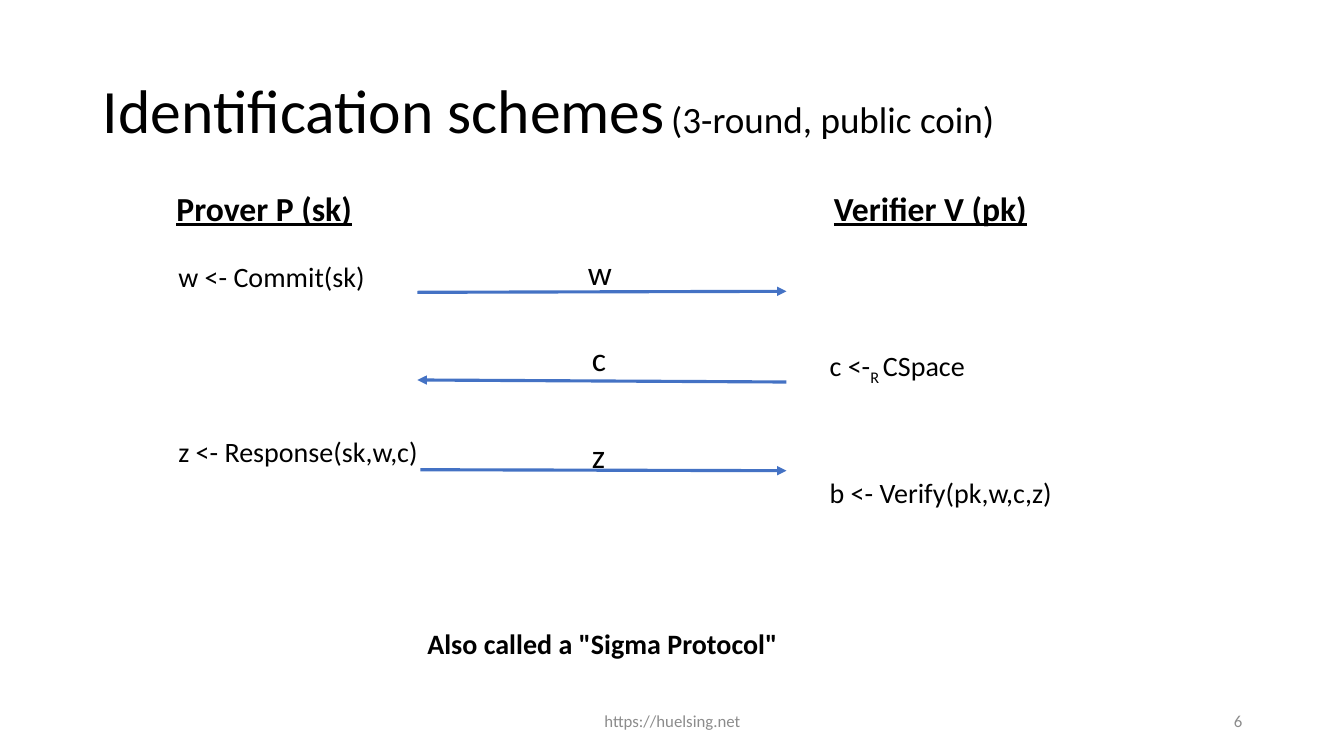
import pptx
import pptx.dml.color
import pptx.enum.shapes
import pptx.enum.text
import pptx.oxml
import pptx.oxml.ns
import pptx.util

Inches = pptx.util.Inches
Pt = pptx.util.Pt
ALIGN = pptx.enum.text.PP_ALIGN
ANCHOR = pptx.enum.text.MSO_ANCHOR
COLORS = {"text": "000000", "arrow": "4472C4", "footer": "8C8C8C"}


def style(run, size, color="text", bold=False, underline=False):
    run.font.name = "Calibri"
    run.font.size = Pt(size)
    run.font.bold = bold
    run.font.underline = underline
    run.font.color.rgb = pptx.dml.color.RGBColor.from_string(COLORS[color])


def add_text(box, parts, size, inset=(0.1, 0.05), align=ALIGN.LEFT,
             anchor=ANCHOR.TOP, **look):
    """Place a text box made of one run per part and return its runs."""
    frame = slide.shapes.add_textbox(*map(Inches, box)).text_frame
    frame.word_wrap = True
    frame.vertical_anchor = anchor
    frame.margin_left = frame.margin_right = Inches(inset[0])
    frame.margin_top = frame.margin_bottom = Inches(inset[1])
    line = frame.paragraphs[0]
    line.alignment = align
    for part in parts:
        run = line.add_run()
        run.text = part
        style(run, size, **look)
    return line.runs


prs = pptx.Presentation()
prs.slide_width = Inches(13.33)
prs.slide_height = Inches(7.5)
slide = prs.slides.add_slide(prs.slide_layouts[5])

# Title
title = slide.shapes.title
title.left, title.top = Inches(0.92), Inches(0.4)
title.width, title.height = Inches(11.5), Inches(1.45)
title.text_frame.auto_size = pptx.enum.text.MSO_AUTO_SIZE.NONE
title.text_frame.vertical_anchor = ANCHOR.MIDDLE
heading = title.text_frame.paragraphs[0]
heading.alignment = ALIGN.LEFT
heading.line_spacing = 0.9
for words, size in [("Identification schemes", 44), (" ", 18),
                    ("(3-round, public coin)", 26.5)]:
    run = heading.add_run()
    run.text = words
    style(run, size)

# The two parties
WIDE_INSET = (0.13, 0.07)
for party, left in [("Prover P (sk)", 1.62), ("Verifier V (pk)", 8.14)]:
    add_text((left, 1.79, 2.48, 0.54), [party], 24, WIDE_INSET,
             bold=True, underline=True)

# Messages between them: label, label position, arrow start, arrow end
messages = [
    ("w", (5.7, 2.43), (4.14, 2.9), (7.8, 2.89)),
    ("c", (5.74, 3.28), (7.8, 3.79), (4.14, 3.77)),
    ("z", (5.74, 4.24), (4.17, 4.66), (7.8, 4.67)),
]
for message, place, start, end in messages:
    arrow = slide.shapes.add_connector(
        pptx.enum.shapes.MSO_CONNECTOR.STRAIGHT, *map(Inches, start + end))
    arrow.line.color.rgb = pptx.dml.color.RGBColor.from_string(COLORS["arrow"])
    arrow.line.width = Pt(2.25)
    head = pptx.oxml.parse_xml(
        f'<a:tailEnd {pptx.oxml.ns.nsdecls("a")} type="triangle"/>')
    arrow.line._get_or_add_ln().append(head)
    arrow._element.spPr.append(
        pptx.oxml.parse_xml(f'<a:effectLst {pptx.oxml.ns.nsdecls("a")}/>'))
    add_text(place + (0.47, 0.54), [message], 24, WIDE_INSET)

# Computation steps of each party
PROVER, VERIFIER = 1.67, 8.13
add_text((PROVER, 2.53, 2.18, 0.44), ["w <- Commit(sk)"], 20)
challenge = add_text((VERIFIER, 3.41, 1.98, 0.44), ["c <-", "R ", "CSpace"], 20)
challenge[1]._r.get_or_add_rPr().set("baseline", "-25000")
add_text((PROVER, 4.26, 2.64, 0.44), ["z <- Response(sk,w,c)"], 20)
add_text((VERIFIER, 4.67, 2.51, 0.44), ["b <- Verify(pk,w,c,z)"], 20)

add_text((4.14, 6.17, 3.69, 0.44), ['Also called a "Sigma Protocol"'], 20, bold=True)

# Footer
for words, left, width, align in [("https://huelsing.net", 4.42, 4.5, ALIGN.CENTER),
                                  ("6", 9.42, 3, ALIGN.RIGHT)]:
    add_text((left, 6.95, width, 0.4), [words], 12, align=align,
             anchor=ANCHOR.MIDDLE, color="footer")

prs.save("out.pptx")
